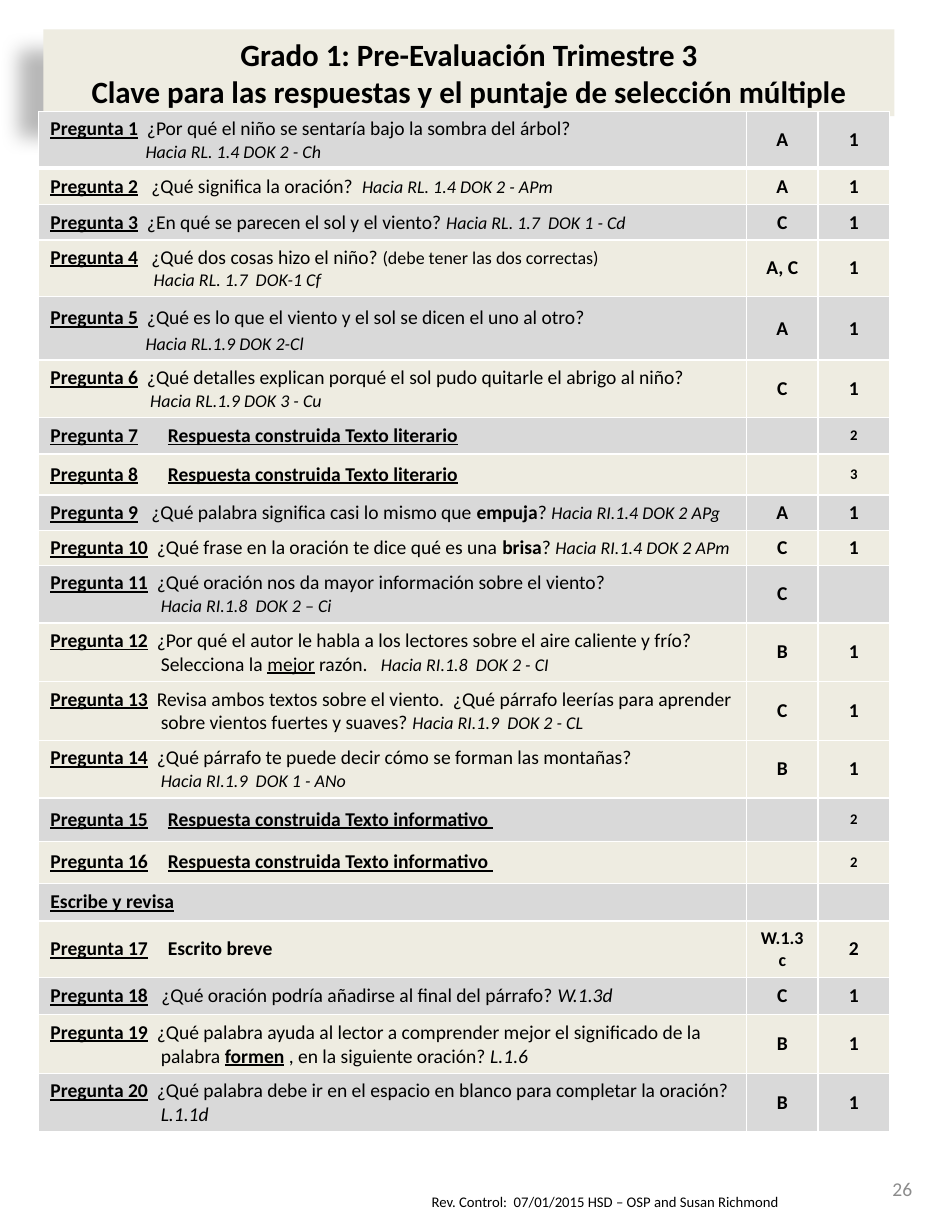
from dataclasses import dataclass

from lxml.etree import SubElement
from pptx import Presentation
from pptx.dml.color import RGBColor
from pptx.enum.shapes import MSO_SHAPE as Preset
from pptx.enum.text import MSO_ANCHOR as Anchor, PP_ALIGN as Align
from pptx.oxml import parse_xml
from pptx.oxml.ns import nsdecls, qn
from pptx.util import Pt

PX = 9144  # EMU in one px, 100 px to the inch


@dataclass(frozen=True)
class Theme:
    font: str = "Calibri"
    ink: str = "000000"
    muted: str = "8C8C8C"
    cream: str = "EEECE1"
    grey: str = "D9D9D9"
    border: str = "FFFFFF"
    title: int = 19
    body: int = 12
    small: int = 11
    tiny: int = 9


THEME = Theme()


@dataclass(frozen=True)
class Span:
    text: str
    size: int = THEME.body
    bold: bool = False
    italic: bool = False
    underline: bool = False
    color: str = THEME.ink


@dataclass(frozen=True)
class Line:
    spans: tuple[Span, ...]
    left: int = 0
    first: int = 0
    spacing: float = 1.0
    tab: int = 0
    align: Align = Align.LEFT


@dataclass(frozen=True)
class Row:
    height: int
    lines: tuple[Line, ...]
    key: str = ""
    points: str = "1"
    key_size: int = THEME.body
    points_size: int = THEME.body
    fill: str = ""  # empty: follows the alternating bands


def strong(text: str, underline: bool = False) -> Span:
    return Span(text, bold=True, underline=underline)


def standard(text: str, size: int = THEME.small) -> Span:
    return Span(text, size, italic=True)


def question(number: int, *spans: Span, gap: str = "  ", hang: int = 0, spacing: float = 1.0) -> Line:
    """Line that opens with the underlined question label."""
    label = strong(f"Pregunta {number}", underline=True)
    return Line((label, strong(gap), *spans), hang, -hang, spacing)


def below(text: str, left: int, first: int, spacing: float = 1.0) -> Line:
    """Standard reference on a line of its own."""
    return Line((standard(text),), left, first, spacing)


def written(number: int, text: str, tab: int, underline: bool = True) -> tuple[Line, ...]:
    """Label with a heading set at a tab stop, for written answers."""
    label = strong(f"Pregunta {number}", underline=True)
    return (Line((label, strong("\t"), strong(text, underline)), tab=tab),)


LITERARY = "Respuesta construida Texto literario"
INFORMATIVE = "Respuesta construida Texto informativo "
ROWS = (
    Row(47, (question(1, Span("¿Por qué el niño se sentaría bajo la sombra del árbol?"), hang=88),
             below("Hacia RL. 1.4 DOK 2 - Ch", 88, -7)), "A"),
    Row(31, (question(2, Span(" ¿Qué significa la oración?  "), standard("Hacia RL. 1.4 DOK 2 - APm")),), "A"),
    Row(30, (question(3, Span("¿En qué se parecen el sol y el viento? "),
                      standard("Hacia RL. 1.7  DOK 1 - Cd")),), "C"),
    Row(48, (question(4, Span("¿Qué dos cosas hizo el niño? "), Span("(debe tener las dos correctas)", THEME.small),
                      gap="   ", hang=100),
             below("Hacia RL. 1.7  DOK-1 Cf", 100, -12)), "A, C"),
    Row(54, (question(5, Span("¿Qué es lo que el viento y el sol se dicen el uno al otro?"), hang=81, spacing=1.15),
             below("Hacia RL.1.9 DOK 2-Cl", 81, 0, 1.15)), "A"),
    Row(49, (question(6, Span("¿Qué detalles explican porqué el sol pudo quitarle el abrigo al niño?"), hang=88),
             below("Hacia RL.1.9 DOK 3 - Cu", 88, -3)), "C"),
    Row(31, written(7, LITERARY, 225), points="2", points_size=THEME.tiny),
    Row(35, written(8, LITERARY, 225), points="3", points_size=THEME.tiny),
    Row(30, (question(9, Span("¿Qué palabra significa casi lo mismo que "), strong("empuja"), Span("? "),
                      standard("Hacia RI.1.4 DOK 2 APg"), gap="   "),), "A"),
    Row(30, (question(10, Span("¿Qué frase en la oración te dice qué es una "), strong("brisa"), Span("? "),
                      standard("Hacia RI.1.4 DOK 2 APm")),), "C"),
    Row(49, (question(11, Span("¿Qué oración nos da mayor información sobre el viento?"), hang=88),
             below("Hacia RI.1.8  DOK 2 – Ci", 88, 6)), "C", points=""),
    Row(50, (question(12, Span("¿Por qué el autor le habla a los lectores sobre el aire caliente y frío? "
                               "Selecciona la "), Span("mejor", underline=True), Span(" razón.   "),
                      standard("Hacia RI.1.8  DOK 2 - CI"), hang=94),), "B"),
    Row(49, (question(13, Span("Revisa ambos textos sobre el viento.  ¿Qué párrafo leerías para aprender "
                               "sobre vientos fuertes y suaves? "),
                      standard("Hacia RI.1.9  DOK 2 - CL"), hang=94),), "C", fill=THEME.cream),
    Row(49, (question(14, Span("¿Qué párrafo te puede decir cómo se forman las montañas?")),
             below("Hacia RI.1.9  DOK 1 - ANo", 0, 94)), "B"),
    Row(37, written(15, INFORMATIVE, 211), points="2", points_size=THEME.tiny),
    Row(36, written(16, INFORMATIVE, 211), points="2", points_size=THEME.tiny),
    Row(32, (Line((strong("Escribe y revisa", underline=True),)),), points=""),
    Row(48, written(17, "Escrito breve", 301, underline=False), "W.1.3c", "2", key_size=THEME.small),
    Row(32, (question(18, Span("¿Qué oración podría añadirse al final del párrafo? "),
                      standard("W.1.3d", THEME.body), gap="   "),), "C"),
    Row(50, (question(19, Span("¿Qué palabra ayuda al lector a comprender mejor el significado de la palabra "),
                      strong("formen", underline=True), Span(" , en la siguiente oración? "),
                      standard("L.1.6", THEME.body), hang=94),), "B"),
    Row(50, (question(20, Span("¿Qué palabra debe ir en el espacio en blanco para completar la oración? "),
                      standard("L.1.1d", THEME.body), hang=94),), "B"),
)
COLUMNS = (603, 61, 61)


def write_lines(frame, lines: tuple[Line, ...]) -> None:
    for index, line in enumerate(lines):
        para = frame.add_paragraph() if index else frame.paragraphs[0]
        para.alignment = line.align
        para.line_spacing = line.spacing
        properties = para._p.get_or_add_pPr()
        properties.set("marL", str(line.left * PX))
        properties.set("indent", str(line.first * PX))
        if line.tab:
            stops = SubElement(properties, qn("a:tabLst"))
            SubElement(stops, qn("a:tab"), pos=str(line.tab * PX), algn="l")
        for span in line.spans:
            run = para.add_run()
            run.text = span.text
            font = run.font
            font.name, font.size = THEME.font, Pt(span.size)
            font.bold, font.italic, font.underline = span.bold, span.italic, span.underline
            font.color.rgb = RGBColor.from_string(span.color)


def set_borders(cell, top: int, bottom: int) -> None:
    """White cell borders; must run before the fill is set."""
    properties = cell._tc.get_or_add_tcPr()
    for side, points in (("L", 1), ("R", 1), ("T", top), ("B", bottom)):
        properties.append(parse_xml(
            f'<a:ln{side} {nsdecls("a")} w="{Pt(points)}"><a:solidFill>'
            f'<a:srgbClr val="{THEME.border}"/></a:solidFill></a:ln{side}>'))


def draw_answer_key(page, rows: tuple[Row, ...]) -> None:
    height = sum(row.height for row in rows)
    table = page.shapes.add_table(len(rows), len(COLUMNS), 33 * PX, 95 * PX,
                                  sum(COLUMNS) * PX, height * PX).table
    table.first_row = table.horz_banding = False
    for column, width in zip(table.columns, COLUMNS):
        column.width = width * PX
    for index, row in enumerate(rows):
        table.rows[index].height = row.height * PX
        fill = row.fill or (THEME.cream if index % 2 else THEME.grey)
        key = Line((Span(row.key, row.key_size, bold=True),) if row.key else (), align=Align.CENTER)
        points = Line((Span(row.points, row.points_size, bold=True),) if row.points else (), align=Align.CENTER)
        for column, lines in enumerate((row.lines, (key,), (points,))):
            cell = table.cell(index, column)
            set_borders(cell, 3 if index == 1 else 1, 3 if index == 0 else 1)
            cell.fill.solid()
            cell.fill.fore_color.rgb = RGBColor.from_string(fill)
            cell.vertical_anchor = Anchor.MIDDLE
            write_lines(cell.text_frame, lines)
            if not cell.text_frame.text:
                SubElement(cell.text_frame.paragraphs[0]._p, qn("a:endParaRPr"), sz=str(THEME.body * 100))


def draw_title(page, *titles: str) -> None:
    box = page.shapes.add_shape(Preset.RECTANGLE, 37 * PX, 25 * PX, 725 * PX, 74 * PX)
    box.fill.solid()
    box.fill.fore_color.rgb = RGBColor.from_string(THEME.cream)
    box.line.fill.background()
    box._element.spPr.append(parse_xml(
        f'<a:effectLst {nsdecls("a")}><a:outerShdw blurRad="{Pt(11.8)}" dist="{Pt(19.7)}" '
        f'dir="{141 * 60000}" algn="ctr" rotWithShape="0"><a:srgbClr val="{THEME.ink}">'
        f'<a:alpha val="28000"/></a:srgbClr></a:outerShdw></a:effectLst>'))
    frame = box.text_frame
    frame.word_wrap = True
    frame.vertical_anchor = Anchor.TOP
    write_lines(frame, tuple(Line((Span(title, THEME.title, bold=True),), align=Align.CENTER) for title in titles))


def draw_note(page, left: int, top: int, width: int, height: int, line: Line, anchor: Anchor) -> None:
    frame = page.shapes.add_textbox(left * PX, top * PX, width * PX, height * PX).text_frame
    frame.word_wrap = True
    frame.vertical_anchor = anchor
    write_lines(frame, (line,))


def main() -> None:
    deck = Presentation()
    deck.slide_width, deck.slide_height = 800 * PX, 1050 * PX
    page = deck.slides.add_slide(deck.slide_layouts[6])
    revision = Span("Rev. Control:  07/01/2015 HSD – OSP and Susan Richmond", THEME.tiny)
    draw_note(page, 358, 1012, 400, 40, Line((revision,)), Anchor.TOP)
    draw_title(page, "Grado 1: Pre-Evaluación Trimestre 3",
               "Clave para las respuestas y el puntaje de selección múltiple")
    draw_answer_key(page, ROWS)
    number = Line((Span("26", color=THEME.muted),), align=Align.RIGHT)
    draw_note(page, 700, 992, 87, 42, number, Anchor.MIDDLE)
    deck.save("out.pptx")


if __name__ == "__main__":
    main()
